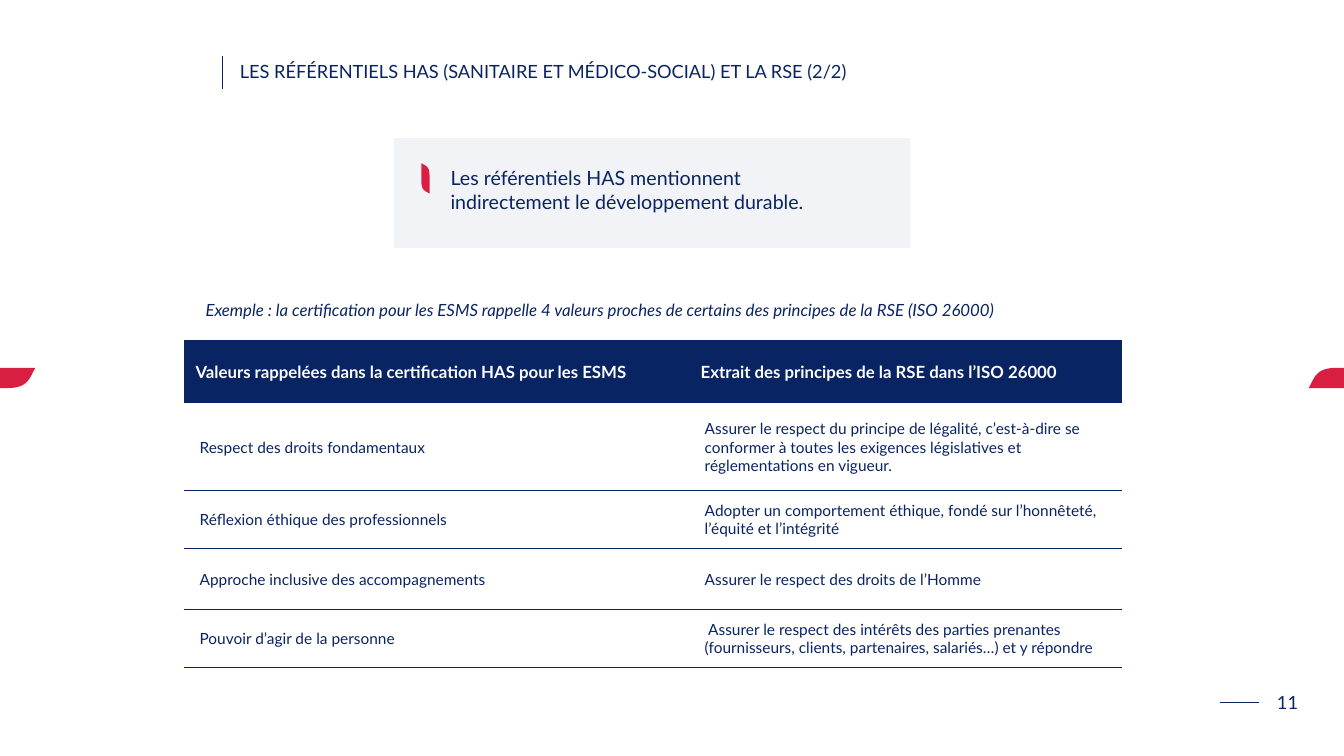
from lxml import etree
from pptx import Presentation
from pptx.dml.color import RGBColor
from pptx.enum import shapes, text
from pptx.oxml.ns import qn
from pptx.util import Inches, Pt

# Content
TITLE = "LES RÉFÉRENTIELS HAS (SANITAIRE ET MÉDICO-SOCIAL) ET LA RSE (2/2)"
KEY_MESSAGE = "Les référentiels HAS mentionnent indirectement le développement durable."
EXAMPLE = ("Exemple : la certification pour les ESMS rappelle 4 valeurs proches "
           "de certains des principes de la RSE (ISO 26000)")
PAGE_NUMBER = "11"
VALUES = [
    ("Valeurs rappelées dans la certification HAS pour les ESMS",
     "Extrait des principes de la RSE dans l’ISO 26000"),
    ("Respect des droits fondamentaux",
     "Assurer le respect du principe de légalité, c’est-à-dire se conformer à toutes "
     "les exigences législatives et réglementations en vigueur."),
    ("Réflexion éthique des professionnels",
     "Adopter un comportement éthique, fondé sur l’honnêteté, l’équité et l’intégrité"),
    ("Approche inclusive des accompagnements",
     "Assurer le respect des droits de l’Homme"),
    ("Pouvoir d’agir de la personne",
     " Assurer le respect des intérêts des parties prenantes (fournisseurs, clients, "
     "partenaires, salariés…) et y répondre"),
]

# Format
COLORS = {"navy": "092462", "red": "D91F41", "white": "FCFCFF"}
FONT = "Lato"
COLUMN_WIDTHS = [5.01, 4.3]
ROW_HEIGHTS = [0.63, 0.86, 0.58, 0.6, 0.58]
TABLE_LEFT, TABLE_TOP = 1.82, 3.37
# Half a leaf outline as (along, across) fractions: a corner, then a curve
LEAF_START = (0.62, 1)
LEAF_CURVE = [LEAF_START, (0.9, 1), (0.92, 0.5), (1, 0)]
CURVE_STEPS = 16

prs = Presentation()
prs.slide_width, prs.slide_height = Inches(13.33), Inches(7.5)
slide = prs.slides.add_slide(prs.slide_layouts[5])


def rgb(name):
    return RGBColor.from_string(COLORS[name])


def write(frame, words, size, color="navy", align=text.PP_ALIGN.LEFT, **font_format):
    frame.text = words
    paragraph = frame.paragraphs[0]
    paragraph.alignment = align
    font = paragraph.runs[0].font
    font.color.rgb = rgb(color)
    for name, value in {"name": FONT, "size": Pt(size), **font_format}.items():
        setattr(font, name, value)


def add_text(box, words, size, wrap=True, **font_format):
    frame = slide.shapes.add_textbox(*map(Inches, box)).text_frame
    frame.word_wrap = wrap
    write(frame, words, size, **font_format)
    return frame


def add_rule(x1, y1, x2, y2):
    rule = slide.shapes.add_connector(
        shapes.MSO_CONNECTOR.STRAIGHT, *map(Inches, (x1, y1, x2, y2)))
    rule.line.color.rgb = rgb("navy")
    rule.line.width = Pt(0.35)
    etree.SubElement(rule._element.spPr, qn("a:effectLst"))


def bezier(points, t):
    weights = ((1 - t) ** 3, 3 * t * (1 - t) ** 2, 3 * t * t * (1 - t), t ** 3)
    return tuple(sum(w * p[axis] for w, p in zip(weights, points)) for axis in (0, 1))


def add_leaf(left, top, width, height, upright=False):
    half = [bezier(LEAF_CURVE, step / CURVE_STEPS) for step in range(CURVE_STEPS + 1)]
    outline = half + [(1 - along, 1 - across) for along, across in half]
    if upright:
        outline = [(across, 1 - along) for along, across in outline]
    points = [(Inches(left + x * width), Inches(top + y * height)) for x, y in outline]
    builder = slide.shapes.build_freeform(*points[0])
    builder.add_line_segments(points[1:], close=True)
    leaf = builder.convert_to_shape()
    leaf.shadow.inherit = False
    leaf.fill.solid()
    leaf.fill.fore_color.rgb = rgb("red")
    leaf.line.fill.background()


def set_borders(cell, ruled_sides):
    properties = cell._tc.get_or_add_tcPr()
    for position, side in enumerate("LRTB"):
        border = etree.Element(qn(f"a:ln{side}"), w=str(Pt(0.25)))
        if side in ruled_sides:
            fill = etree.SubElement(border, qn("a:solidFill"))
            etree.SubElement(fill, qn("a:srgbClr"), val=COLORS["navy"])
        else:
            etree.SubElement(border, qn("a:noFill"))
        properties.insert(position, border)


# Page number and side leaves
number = add_text((12.52, 6.81, 0.5, 0.32), PAGE_NUMBER, 13, wrap=False,
                  align=text.PP_ALIGN.CENTER)
number.vertical_anchor = text.MSO_ANCHOR.MIDDLE
add_rule(12.1, 6.97, 12.49, 6.97)
for leaf_left in (-0.36, 12.98):
    add_leaf(leaf_left, 3.65, 0.71, 0.2)

# Title
title = slide.shapes.title
title.left, title.top, title.width, title.height = map(Inches, (2.18, 0.52, 10.32, 0.38))
heading = title.text_frame
write(heading, TITLE, 13)
for name, value in {"margin_left": Inches(0.2), "margin_right": Inches(0.1),
                    "margin_top": Inches(0.05), "margin_bottom": Inches(0.05),
                    "vertical_anchor": text.MSO_ANCHOR.MIDDLE, "word_wrap": True,
                    "auto_size": text.MSO_AUTO_SIZE.NONE}.items():
    setattr(heading, name, value)
add_rule(2.2, 0.56, 2.2, 0.88)

# Key message on a pale panel
panel = slide.shapes.add_shape(
    shapes.MSO_SHAPE.RECTANGLE, *map(Inches, (3.91, 1.37, 5.12, 1.09)))
panel.shadow.inherit = False
panel.fill.solid()
panel.fill.fore_color.rgb = rgb("navy")
panel.line.fill.background()
panel_color = panel._element.spPr.find(qn("a:solidFill"))[0]
etree.SubElement(panel_color, qn("a:alpha"), val="5000")
add_leaf(4.18, 1.62, 0.08, 0.3, upright=True)
add_text((4.37, 1.6, 4.05, 0.57), KEY_MESSAGE, 14)

# Example and table of values
add_text((1.94, 2.92, 9.46, 0.3), EXAMPLE, 12, italic=True)
table = slide.shapes.add_table(
    len(VALUES), len(COLUMN_WIDTHS), Inches(TABLE_LEFT), Inches(TABLE_TOP),
    Inches(sum(COLUMN_WIDTHS)), Inches(sum(ROW_HEIGHTS))).table
table.horz_banding = False
for column, width in zip(table.columns, COLUMN_WIDTHS):
    column.width = Inches(width)
for row, height in zip(table.rows, ROW_HEIGHTS):
    row.height = Inches(height)
for r, row_values in enumerate(VALUES):
    is_header = r == 0
    for c, words in enumerate(row_values):
        cell = table.cell(r, c)
        cell.vertical_anchor = text.MSO_ANCHOR.MIDDLE
        cell.margin_left = Inches(0.12 if is_header else 0.16)
        cell.margin_top = cell.margin_right = Inches(0.01)
        cell.margin_bottom = 0
        if is_header:
            cell.fill.solid()
            cell.fill.fore_color.rgb = rgb("navy")
            write(cell.text_frame, words, 12, "white", bold=True)
        else:
            cell.fill.background()
            write(cell.text_frame, words, 11, bold=False)
        set_borders(cell, "" if is_header else "B" if r == 1 else "TB")

prs.save("out.pptx")
